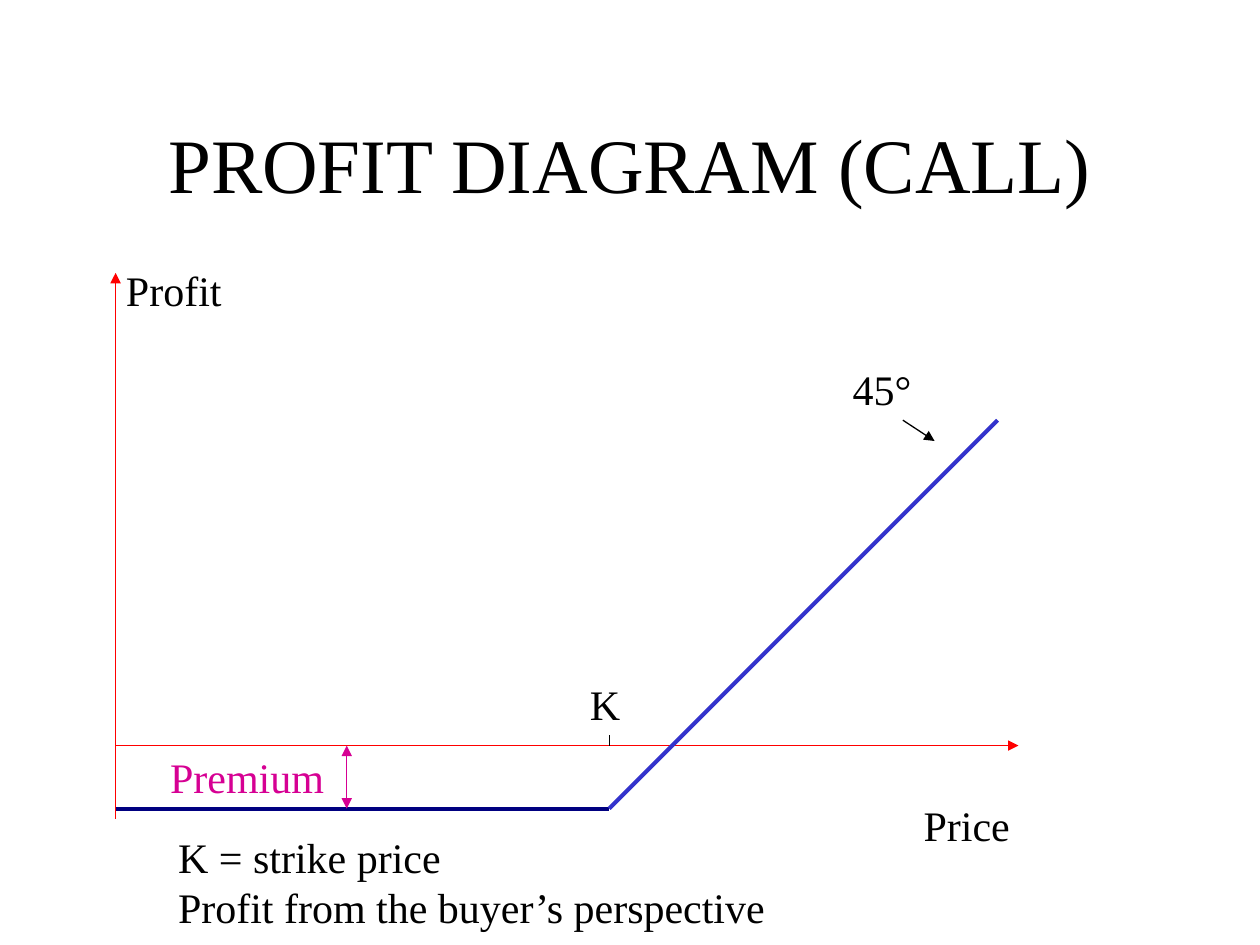
import pptx
import pptx.dml.color
import pptx.enum.shapes
import pptx.enum.text
import pptx.oxml.ns
import pptx.util
import lxml.etree
from dataclasses import dataclass

Cm = pptx.util.Cm
Pt = pptx.util.Pt
Rgb = pptx.dml.color.RGBColor
Align = pptx.enum.text.PP_ALIGN
Anchor = pptx.enum.text.MSO_ANCHOR
Fit = pptx.enum.text.MSO_AUTO_SIZE


@dataclass(frozen=True)
class Theme:
    font: str = "Times New Roman"
    head: int = 44
    body: int = 24
    thin: float = 0.75
    thick: float = 2.25
    ink: str = "000000"
    axis: str = "FF0000"
    loss: str = "000080"
    gain: str = "3333CC"
    cost: str = "D60093"


@dataclass(frozen=True)
class Label:
    lines: tuple[str, ...]
    left: float
    top: float
    width: float
    height: float = 1.27
    size: int = Theme.body
    color: str = Theme.ink
    title: bool = False


@dataclass(frozen=True)
class Line:
    start: tuple[float, float]
    end: tuple[float, float]
    color: str = Theme.ink
    width: float = Theme.thin
    tips: tuple[str, ...] = ()


LEFT, ZERO, LOSS, STRIKE = 2.33, 15.03, 16.3, 12.28
MARK, GAIN, RISE = 6.99, 20.11, 8.47

LINES = (
    Line((LEFT, 5.5), (LEFT, 16.51), Theme.axis, tips=("headEnd",)),
    Line((LEFT, ZERO), (20.53, ZERO), Theme.axis, tips=("tailEnd",)),
    Line((18.2, RISE), (18.84, 8.89), tips=("tailEnd",)),
    Line((LEFT, LOSS), (STRIKE, LOSS), Theme.loss, Theme.thick),
    Line((MARK, ZERO), (MARK, LOSS), Theme.cost, tips=("headEnd", "tailEnd")),
    Line((STRIKE, ZERO), (STRIKE, 14.82)),
    Line((STRIKE, LOSS), (GAIN, RISE), Theme.gain, Theme.thick),
)

LABELS = (
    Label(("PROFIT DIAGRAM (CALL)",), 1.9, 1.7, 21.6, 3.18, Theme.head, title=True),
    Label(("K",), 11.64, 13.55, 1.12),
    Label(("Price",), 18.37, 16.0, 2.24),
    Label(("K = strike price", "Profit from the buyer’s perspective"),
          3.34, 16.63, 12.34, 2.29),
    Label(("Profit",), 2.29, 5.21, 2.44),
    Label(("45°",), 16.94, 7.2, 1.7),
    Label(("Premium",), 3.18, ZERO, 3.62, color=Theme.cost),
)


def write(slide: pptx.slide.Slide, label: Label) -> None:
    """Place a label and add its text run by run."""
    box = slide.shapes.add_textbox(
        Cm(label.left), Cm(label.top), Cm(label.width), Cm(label.height))
    frame = box.text_frame
    frame.word_wrap = label.title
    frame.auto_size = Fit.NONE if label.title else Fit.SHAPE_TO_FIT_TEXT
    frame.vertical_anchor = Anchor.MIDDLE if label.title else Anchor.TOP
    for i, text in enumerate(label.lines):
        para = frame.add_paragraph() if i else frame.paragraphs[0]
        para.alignment = Align.CENTER if label.title else Align.LEFT
        run = para.add_run()
        run.text = text
        run.font.name = Theme.font
        run.font.size = Pt(label.size)
        run.font.color.rgb = Rgb.from_string(label.color)


def draw(slide: pptx.slide.Slide, line: Line) -> None:
    """Draw a straight line with its arrowheads."""
    link = slide.shapes.add_connector(
        pptx.enum.shapes.MSO_CONNECTOR.STRAIGHT,
        *map(Cm, line.start + line.end))
    link.line.color.rgb = Rgb.from_string(line.color)
    link.line.width = Pt(line.width)
    qn = pptx.oxml.ns.qn
    props = link._element.spPr
    for tip in line.tips:
        lxml.etree.SubElement(props.find(qn("a:ln")), qn(f"a:{tip}"), type="triangle")
    lxml.etree.SubElement(props, qn("a:effectLst"))


def main() -> None:
    """Build the profit diagram slide."""
    deck = pptx.Presentation()
    deck.slide_width, deck.slide_height = Cm(25.4), Cm(19.05)
    slide = deck.slides.add_slide(deck.slide_layouts[6])
    for line in LINES:
        draw(slide, line)
    for label in LABELS:
        write(slide, label)
    deck.save("out.pptx")


if __name__ == "__main__":
    main()
